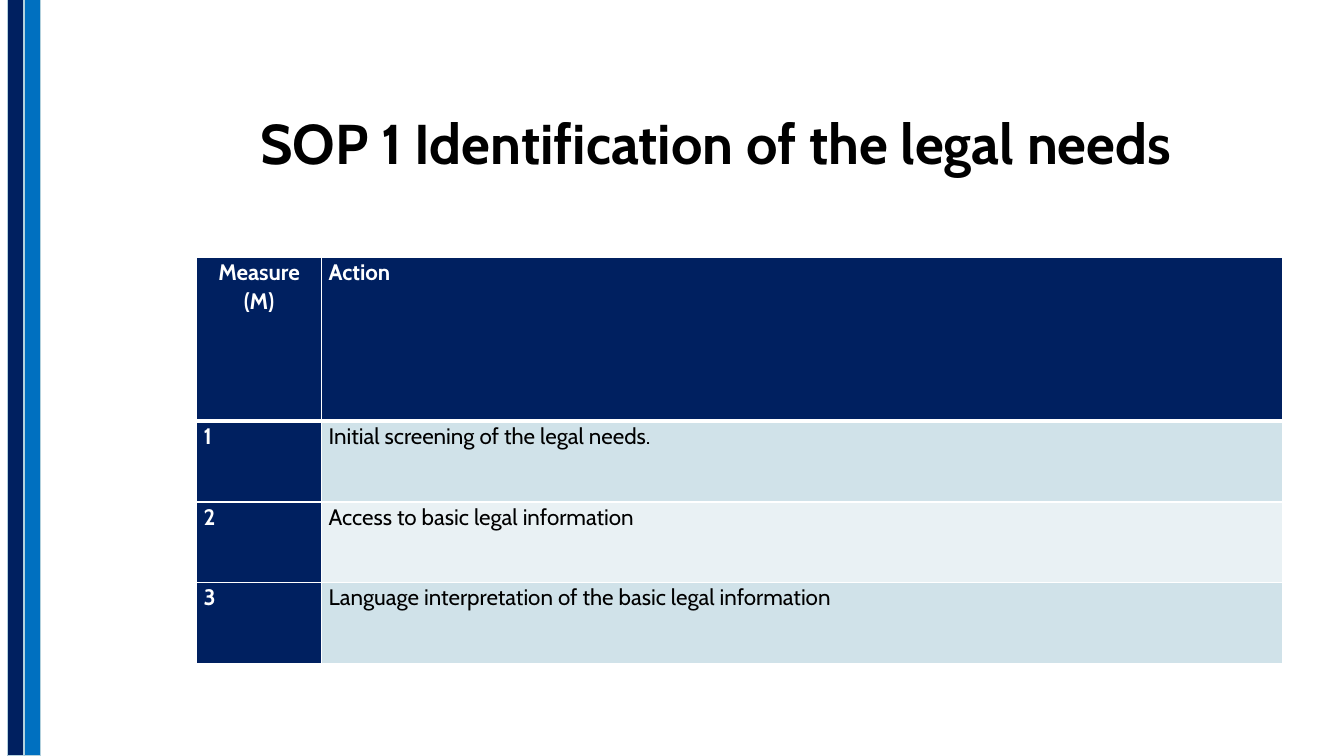
from lxml import etree
from pptx import Presentation
from pptx.dml.color import RGBColor
from pptx.enum.shapes import MSO_SHAPE
from pptx.enum.text import MSO_ANCHOR, PP_ALIGN
from pptx.oxml.ns import qn
from pptx.util import Inches, Pt

RECT = MSO_SHAPE.RECTANGLE
MIDDLE = MSO_ANCHOR.MIDDLE
CENTER, JUSTIFY = PP_ALIGN.CENTER, PP_ALIGN.JUSTIFY

FONT = "Cabin"
COLORS = {
    "navy": "002060",
    "blue": "0070C0",
    "edge": "B3D1DD",
    "odd": "D0E2E9",
    "even": "E9F1F4",
    "white": "FFFFFF",
    "black": "000000",
}
ROWS = [
    ("Measure (M)", "Action"),
    ("1", "Initial screening of the legal needs."),
    ("2", "Access to basic legal information"),
    ("3", "Language interpretation of the basic legal information"),
]
WIDTHS = [1.24, 9.53]
HEIGHTS = [1.63, 0.8, 0.8, 0.8]


def color(name):
    """Return the named colour."""
    return RGBColor.from_string(COLORS[name])


def style(para, size, ink, bold, align):
    """Set the font and alignment of a paragraph."""
    para.alignment = align
    para.font.name = FONT
    para.font.size = Pt(size)
    para.font.bold = bold
    para.font.color.rgb = color(ink)


def add_title(slide, left, top, width, height):
    """Add the heading, raised half a line above the middle of its box."""
    box = slide.shapes.add_textbox(
        Inches(left), Inches(top), Inches(width), Inches(height))
    frame = box.text_frame
    frame.word_wrap = True
    frame.vertical_anchor = MIDDLE
    frame.margin_bottom = Inches(0.65)
    para = frame.paragraphs[0]
    para.text = "SOP 1 Identification of the legal needs"
    style(para, 40, "black", True, CENTER)


def add_border(cell, side, points):
    """Draw a white border on one side of a cell."""
    props = cell._tc.get_or_add_tcPr()
    line = etree.SubElement(props, qn(f"a:ln{side}"), w=str(Pt(points)))
    fill = etree.SubElement(line, qn("a:solidFill"))
    etree.SubElement(fill, qn("a:srgbClr"), val=COLORS["white"])


def fill_cell(cell, text, row, col):
    """Write and style one cell according to its place."""
    cell.margin_left = cell.margin_right = Inches(0.07)
    cell.margin_top = cell.margin_bottom = 0
    for side in "LRTB":
        thick = (row, side) in ((0, "B"), (1, "T"))
        add_border(cell, side, 3 if thick else 1)
    head = row == 0 or col == 0
    shade = "navy" if head else "odd" if row % 2 else "even"
    cell.fill.solid()
    cell.fill.fore_color.rgb = color(shade)
    para = cell.text_frame.paragraphs[0]
    para.text = text
    para.line_spacing = 1.07
    style(para, 16, "white" if head else "black", head,
          CENTER if row == col == 0 else JUSTIFY)


def add_grid(slide, left, top):
    """Add the table of measures and actions."""
    table = slide.shapes.add_table(
        len(ROWS), len(WIDTHS), Inches(left), Inches(top),
        Inches(sum(WIDTHS)), Inches(sum(HEIGHTS))).table
    for col, width in zip(table.columns, WIDTHS):
        col.width = Inches(width)
    for row, height in zip(table.rows, HEIGHTS):
        row.height = Inches(height)
    for row, texts in enumerate(ROWS):
        for col, text in enumerate(texts):
            fill_cell(table.cell(row, col), text, row, col)


def add_bars(slide, left, top, height):
    """Add the two upright stripes at the slide edge."""
    for index, name in enumerate(("navy", "blue")):
        bar = slide.shapes.add_shape(
            RECT, Inches(left + 0.17 * index), Inches(top),
            Inches(0.16), Inches(height))
        bar.shadow.inherit = False
        bar.fill.solid()
        bar.fill.fore_color.rgb = color(name)
        bar.line.color.rgb = color("edge")
        bar.line.width = Pt(0.75)


def main():
    """Build and save the slide."""
    deck = Presentation()
    deck.slide_width, deck.slide_height = Inches(13.33), Inches(7.5)
    slide = deck.slides.add_slide(deck.slide_layouts[6])
    add_title(slide, 1.62, 0.75, 10.96, 1.92)
    add_grid(slide, 1.95, 2.55)
    add_bars(slide, 0.07, 0, 7.5)
    deck.save("out.pptx")


if __name__ == "__main__":
    main()
